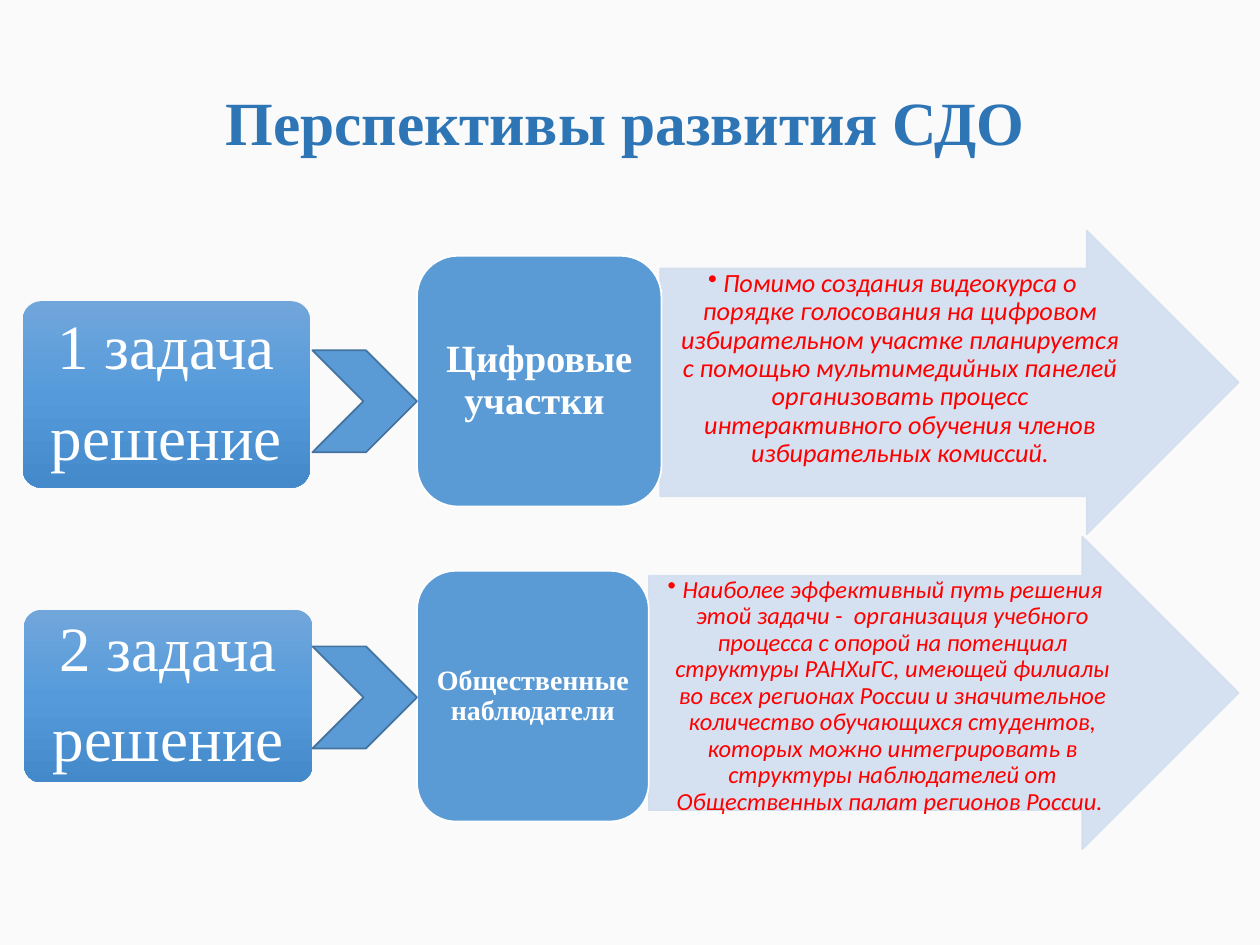
from copy import deepcopy

from lxml.etree import SubElement
from pptx import Presentation
from pptx.dml.color import RGBColor
from pptx.enum.shapes import MSO_SHAPE as Shape
from pptx.enum.text import MSO_ANCHOR as Anchor, MSO_AUTO_SIZE as AutoSize, PP_ALIGN as Align
from pptx.oxml.ns import qn
from pptx.util import Inches, Pt

BACKGROUND = RGBColor(0xFA, 0xFA, 0xFA)
WHITE = RGBColor(0xFF, 0xFF, 0xFF)
RED = RGBColor(0xFF, 0x00, 0x00)
TITLE_BLUE = RGBColor(0x2E, 0x75, 0xB6)
BLUE = RGBColor(0x5B, 0x9B, 0xD5)
DARK_BLUE = RGBColor(0x43, 0x73, 0x9E)
PALE_BLUE = RGBColor(0xD2, 0xDE, 0xEF)
TASK_GRADIENT = [
    (0, RGBColor(0x71, 0xA6, 0xDB)),
    (0.5, RGBColor(0x55, 0x9B, 0xDB)),
    (1, RGBColor(0x44, 0x8A, 0xCA)),
]
SERIF = "Times New Roman"
SANS = "Calibri"

ROWS = [
    {
        "task": ("1 задача", (0.18, 2.39, 2.28, 1.48)),
        "topic": ("Цифровые участки ", 22, (3.31, 2.03, 1.94, 1.99)),
        "detail": (
            "Помимо создания видеокурса о порядке голосования на цифровом "
            "избирательном участке планируется с помощью мультимедийных панелей "
            "организовать процесс интерактивного обучения членов избирательных комиссий.",
            15, (5.24, 1.83, 4.59, 2.41)),
        "chevron": (2.48, 2.78, 0.83, 0.81),
    },
    {
        "task": ("2 задача", (0.19, 4.84, 2.29, 1.37)),
        "topic": ("Общественные наблюдатели", 16, (3.31, 4.53, 1.84, 1.99)),
        "detail": (
            "Наиболее эффективный путь решения этой задачи -  организация учебного "
            "процесса с опорой на потенциал структуры РАНХиГС, имеющей филиалы во всех "
            "регионах России и значительное количество обучающихся студентов, которых "
            "можно интегрировать в структуры наблюдателей от Общественных палат "
            "регионов России. ",
            14, (5.15, 4.26, 4.68, 2.48)),
        "chevron": (2.48, 5.13, 0.83, 0.81),
    },
]


def add_block(kind, box, fill=None, line=None):
    shape = slide.shapes.add_shape(kind, *[Inches(value) for value in box])
    shape.shadow.inherit = False
    if fill is not None:
        shape.fill.solid()
        shape.fill.fore_color.rgb = fill
    if line is None:
        shape.line.fill.background()
    else:
        shape.line.color.rgb = line
        shape.line.width = Pt(1)
    return shape


def write(shape, lines, size, color, name=SERIF, bold=False, italic=False,
          anchor=Anchor.MIDDLE, margins=(0.1, 0.05)):
    frame = shape.text_frame
    frame.auto_size = AutoSize.NONE
    frame.word_wrap = True
    frame.vertical_anchor = anchor
    frame.margin_left = frame.margin_right = Inches(margins[0])
    frame.margin_top = frame.margin_bottom = Inches(margins[1])
    for index, text in enumerate(lines):
        paragraph = frame.add_paragraph() if index else frame.paragraphs[0]
        paragraph.alignment = Align.CENTER
        paragraph.line_spacing = 0.9
        if index < len(lines) - 1:
            paragraph.space_after = Pt(13)
        run = paragraph.add_run()
        run.text = text
        run.font.name = name
        run.font.size = Pt(size)
        run.font.bold = bold
        run.font.italic = italic
        run.font.color.rgb = color
    return frame.paragraphs[0]


presentation = Presentation()
presentation.slide_width = Inches(10)
presentation.slide_height = Inches(7.5)
slide = presentation.slides.add_slide(presentation.slide_layouts[5])
slide.background.fill.solid()
slide.background.fill.fore_color.rgb = BACKGROUND

title = slide.shapes.title
title.left, title.top = Inches(0.65), Inches(0.5)
title.width, title.height = Inches(8.62), Inches(0.99)
write(title, ["Перспективы развития СДО"], 35.1, TITLE_BLUE, bold=True)

for row in ROWS:
    heading, box = row["task"]
    task = add_block(Shape.ROUNDED_RECTANGLE, box)
    task.adjustments[0] = 0.1
    task.fill.gradient()
    task.fill.gradient_angle = 270
    stop_list = task._element.spPr.find(qn("a:gradFill")).find(qn("a:gsLst"))
    stop_list.append(deepcopy(stop_list[0]))
    for stop, (position, color) in zip(task.fill.gradient_stops, TASK_GRADIENT):
        stop.position = position
        stop.color.rgb = color
    write(task, [heading, "решение"], 36, WHITE, margins=(0.15, 0.15))

for row in ROWS:
    text, size, box = row["detail"]
    arrow = add_block(Shape.RIGHT_ARROW, box, PALE_BLUE, PALE_BLUE)
    arrow.adjustments[0] = 0.75
    arrow.adjustments[1] = 0.5
    for color in arrow._element.spPr.iter(qn("a:srgbClr")):
        SubElement(color, qn("a:alpha"), val="90000")
    paragraph = write(arrow, [text], size, RED, SANS, italic=True,
                      anchor=Anchor.TOP, margins=(0.01, 0.01))
    paragraph.level = 1
    properties = paragraph._p.get_or_add_pPr()
    properties.set("marL", str(Inches(0.12)))
    properties.set("indent", str(-Inches(0.12)))
    SubElement(properties, qn("a:buChar"), char="•")

    text, size, box = row["topic"]
    topic = add_block(Shape.ROUNDED_RECTANGLE, box, BLUE, WHITE)
    write(topic, [text], size, WHITE, bold=True, margins=(0.03, 0.03))

for row in ROWS:
    add_block(Shape.CHEVRON, row["chevron"], BLUE, DARK_BLUE)

presentation.save("out.pptx")
